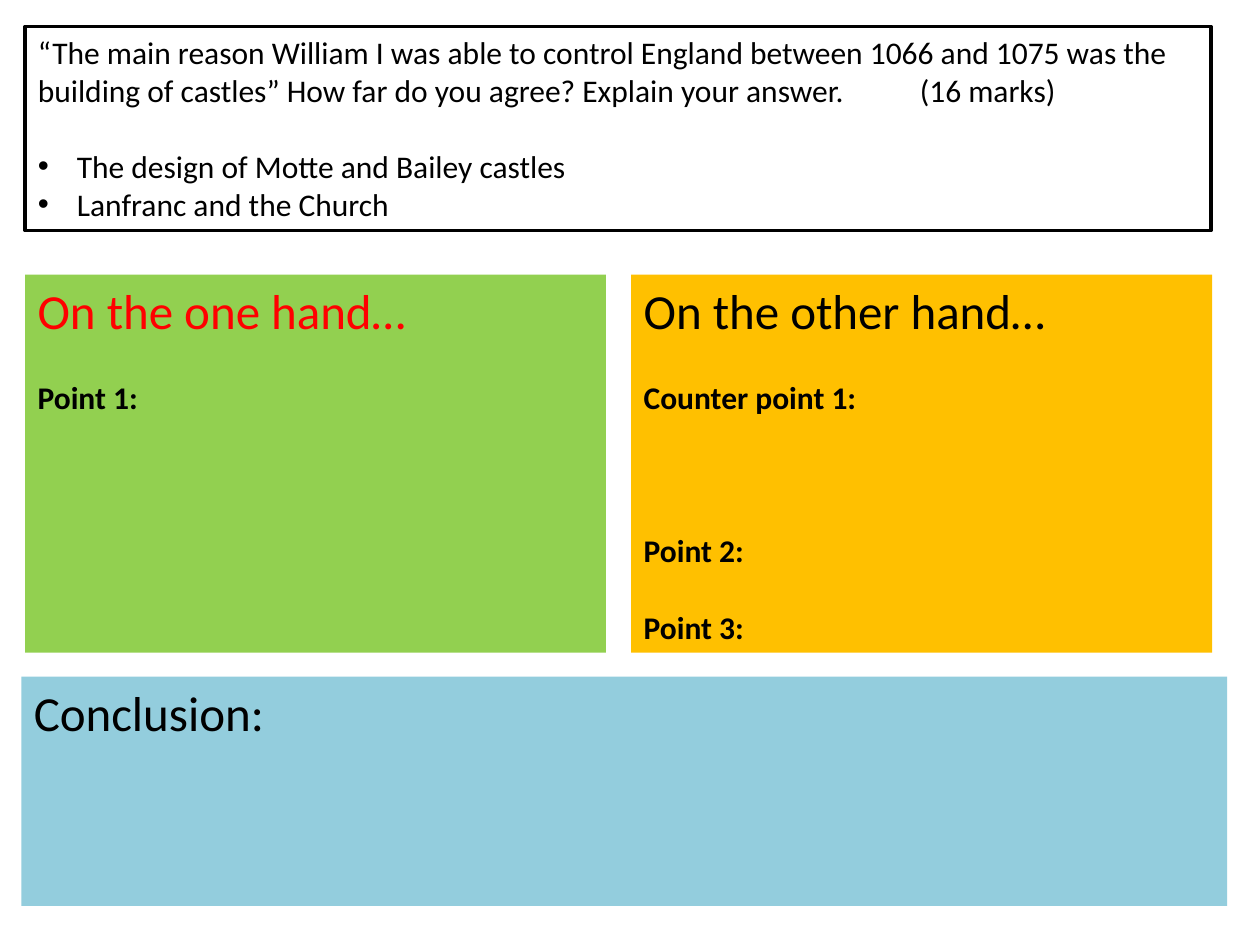
"""Build the essay planning slide about William I and his control of England."""
from pptx import Presentation
from pptx.dml.color import RGBColor
from pptx.enum.shapes import MSO_SHAPE as Shape
from pptx.enum.text import MSO_ANCHOR as Anchor, MSO_AUTO_SIZE as AutoSize, PP_ALIGN as Align
from pptx.oxml.xmlchemy import OxmlElement
from pptx.util import Pt

PX = 9144
LINE = 22
BULLET_INDENT = 31


def color(value):
    return RGBColor.from_string(value)


def write_paragraphs(shape, rows):
    frame = shape.text_frame
    frame.word_wrap = True
    frame.auto_size = AutoSize.NONE
    frame.vertical_anchor = Anchor.TOP
    frame.text = "\n".join(row[0] for row in rows)
    for paragraph, (text, size, bold, ink, blank_lines) in zip(frame.paragraphs, rows):
        paragraph.alignment = Align.LEFT
        paragraph.space_before = Pt(LINE * blank_lines)
        for run in paragraph.runs:
            run.font.name = "Calibri"
            run.font.size = Pt(size)
            run.font.bold = bold
            run.font.color.rgb = color(ink)


presentation = Presentation()
presentation.slide_width = 1000 * PX
presentation.slide_height = 750 * PX
slide = presentation.slides.add_slide(presentation.slide_layouts[1])
title = slide.shapes.title
title.element.getparent().remove(title.element)

panels = [
    (20, 218, 461, 300, "92D050", [
        ("On the one hand…", 28, False, "FF0000", 0),
        ("Point 1:", 18, True, "000000", 1),
    ]),
    (501, 218, 461, 300, "FFC000", [
        ("On the other hand…", 28, False, "000000", 0),
        ("Counter point 1:", 18, True, "000000", 1),
        ("Point 2:", 18, True, "000000", 3),
        ("Point 3:", 18, True, "000000", 1),
    ]),
    (17, 537, 957, 182, "93CDDD", [
        ("Conclusion:", 28, False, "000000", 0),
    ]),
]
for left, top, width, height, fill, rows in panels:
    panel = slide.shapes.add_shape(
        Shape.RECTANGLE, left * PX, top * PX, width * PX, height * PX)
    panel.shadow.inherit = False
    panel.fill.solid()
    panel.fill.fore_color.rgb = color(fill)
    panel.line.fill.background()
    write_paragraphs(panel, rows)

question = slide.placeholders[1]
question.left, question.top = 20 * PX, 21 * PX
question.width, question.height = 941 * PX, 162 * PX
question.fill.solid()
question.fill.fore_color.rgb = color("FFFFFF")
question.line.color.rgb = color("000000")
question.line.width = Pt(2)
write_paragraphs(question, [
    ("“The main reason William I was able to control England between 1066 and 1075 "
     "was the building of castles” How far do you agree? Explain your answer."
     "\t\t(16 marks)", 18, False, "000000", 0),
    ("The design of Motte and Bailey castles", 18, False, "000000", 1),
    ("Lanfranc and the Church", 18, False, "000000", 0),
])
prompt, *bullets = question.text_frame.paragraphs
prompt_format = prompt._p.get_or_add_pPr()
prompt_format.set("marL", "0")
prompt_format.set("indent", "0")
prompt_format.append(OxmlElement("a:buNone"))
for bullet in bullets:
    bullet_format = bullet._p.get_or_add_pPr()
    bullet_format.set("marL", str(BULLET_INDENT * PX))
    bullet_format.set("indent", str(-BULLET_INDENT * PX))

presentation.save("out.pptx")
